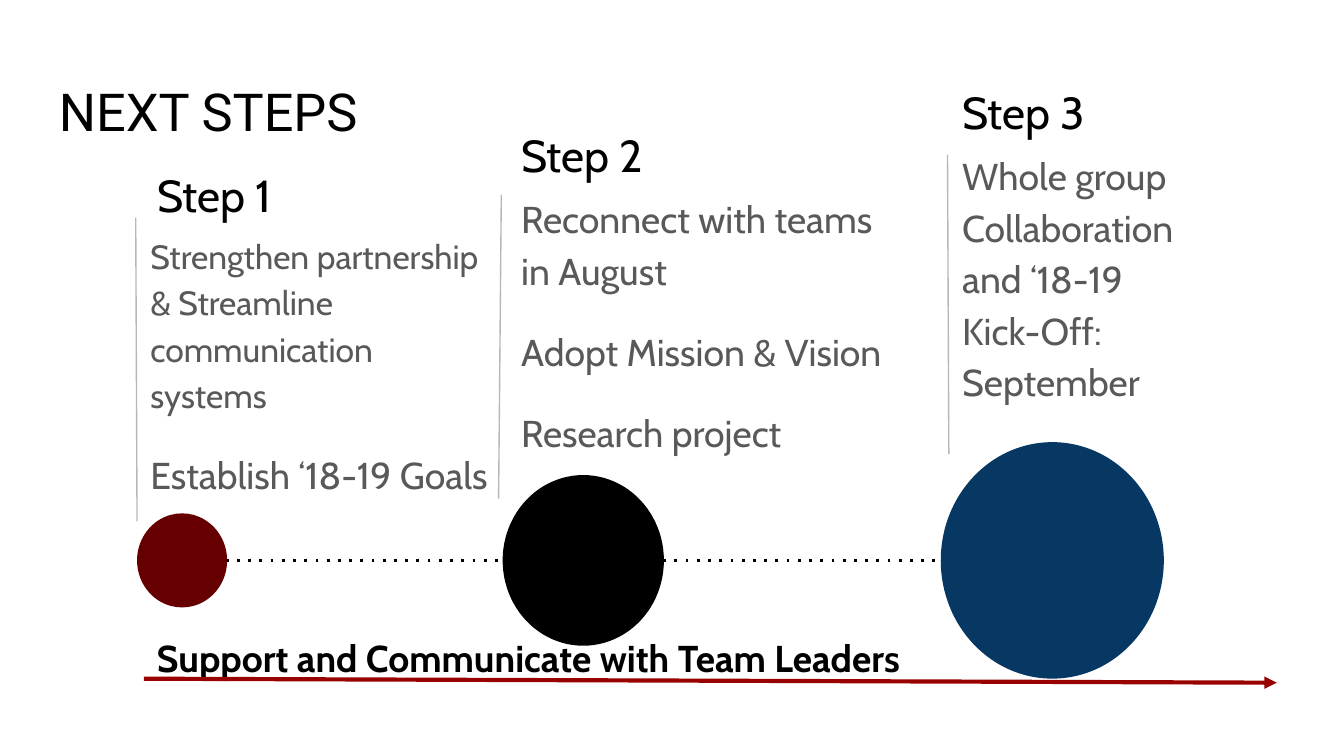
from lxml import etree
from pptx import Presentation, util as u
from pptx.dml.color import RGBColor
from pptx.enum import shapes, text
from pptx.oxml.ns import qn

COLORS = {
    "black": "000000",
    "body": "595959",
    "divider": "B7B7B7",
    "maroon": "660000",
    "navy": "073763",
    "arrow": "990000",
}

presentation = Presentation()
presentation.slide_width = u.Inches(10)
presentation.slide_height = presentation.slide_width * 9 // 16
slide = presentation.slides.add_slide(presentation.slide_layouts[6])


def add_text(box, paragraphs, color="black", font="Cabin", bold=False,
             anchor=text.MSO_ANCHOR.TOP, line_spacing=1.15):
    """Each paragraph is (wording, size, points before, points after)."""
    frame = slide.shapes.add_textbox(*map(u.Inches, box)).text_frame
    frame.word_wrap = True
    frame.vertical_anchor = anchor
    frame.margin_left = frame.margin_right = u.Inches(0.1)
    frame.margin_top = frame.margin_bottom = u.Inches(0.1)
    for index, (wording, size, before, after) in enumerate(paragraphs):
        paragraph = frame.add_paragraph() if index else frame.paragraphs[0]
        paragraph.text = wording
        paragraph.line_spacing = line_spacing
        paragraph.space_before = u.Pt(before)
        paragraph.space_after = u.Pt(after)
        paragraph.font.name = font
        paragraph.font.size = u.Pt(size)
        paragraph.font.bold = bold
        paragraph.font.color.rgb = RGBColor.from_string(COLORS[color])


def add_line(start, end, color, width):
    connector = slide.shapes.add_connector(
        shapes.MSO_CONNECTOR.STRAIGHT, *map(u.Inches, start + end))
    connector.line.color.rgb = RGBColor.from_string(COLORS[color])
    connector.line.width = u.Pt(width)
    etree.SubElement(connector._element.spPr, qn("a:effectLst"))
    return connector


add_text((0.34, 0.49, 9.32, 0.63), [("NEXT STEPS", 28, 0, 0)],
         font="Roboto", line_spacing=1)

# Heading corner, body box, divider ends, body paragraphs
steps = [
    ((1.07, 1.11), (1.02, 1.61, 2.71, 1.42), (1.01, 1.62), (1.02, 3.88),
     [("Strengthen partnership & Streamline communication systems", 18, 0, 0),
      ("Establish ‘18-19 Goals", 20, 16, 16)]),
    ((3.78, 0.81), (3.78, 1.31, 3, 1.98), (3.73, 1.45), (3.71, 3.71),
     [("Reconnect with teams in August", 20, 0, 0),
      ("Adopt Mission & Vision", 20, 16, 0),
      ("Research project", 20, 16, 16)]),
    ((7.06, 0.49), (7.06, 0.99, 1.98, 1.65), (7.05, 1.15), (7.06, 3.38),
     [("Whole group Collaboration and ‘18-19 Kick-Off: September", 20, 0, 16)]),
]
for number, (heading, body, top, bottom, paragraphs) in enumerate(steps, 1):
    add_line(top, bottom, "divider", 0.75)
    add_text(heading + (1.98, 0.68), [(f"Step {number}", 24, 0, 0)],
             anchor=text.MSO_ANCHOR.MIDDLE, line_spacing=1)
    add_text(body, paragraphs, color="body")

# Timeline of growing circles, all centred on one height
timeline_y = 4.17
timeline = add_line((1.68, timeline_y), (7, timeline_y), "black", 1.5)
etree.SubElement(timeline.line._get_or_add_ln(), qn("a:prstDash"), val="dot")
for left, width, height, color in [(1.02, 0.67, 0.7, "maroon"),
                                   (3.74, 1.2, 1.27, "black"),
                                   (7, 1.66, 1.76, "navy")]:
    circle = slide.shapes.add_shape(
        shapes.MSO_SHAPE.OVAL, u.Inches(left), u.Inches(timeline_y - height / 2),
        u.Inches(width), u.Inches(height))
    circle.shadow.inherit = False
    circle.fill.solid()
    circle.fill.fore_color.rgb = RGBColor.from_string(COLORS[color])
    circle.line.fill.background()

add_text((1.07, 4.58, 8.14, 0.63),
         [("Support and Communicate with Team Leaders", 20, 0, 16)], bold=True)
arrow = add_line((1.07, 5.05), (9.5, 5.08), "arrow", 2.25)
etree.SubElement(arrow.line._get_or_add_ln(), qn("a:tailEnd"), type="triangle")

presentation.save("out.pptx")
